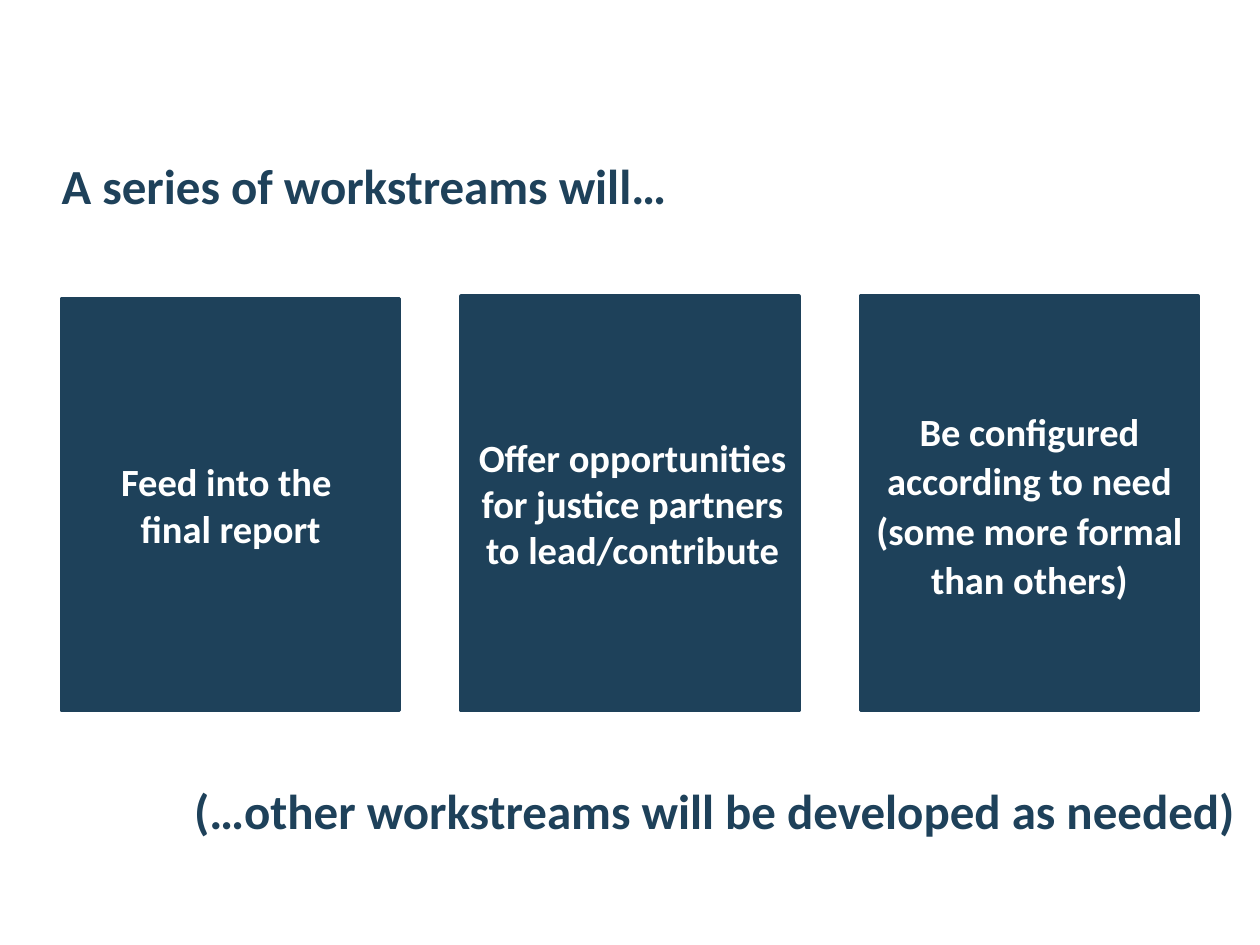
from pptx import Presentation
from pptx.dml.color import RGBColor
from pptx.enum.shapes import MSO_SHAPE
from pptx.enum.text import MSO_ANCHOR, PP_ALIGN
from pptx.util import Inches, Pt

NAVY = RGBColor(0x1E, 0x41, 0x5A)
WHITE = RGBColor(0xFF, 0xFF, 0xFF)
WIDTH, HEIGHT = 10, 7.5
COLS, ROWS = 100, 75


class Deck:
    """Holds the style and the current slide, laid out on a 100 by 75 grid."""

    font = "Calibri"

    def __init__(self):
        self.file = Presentation()
        self.file.slide_width = Inches(WIDTH)
        self.file.slide_height = Inches(HEIGHT)
        self.slide = self.file.slides.add_slide(self.file.slide_layouts[6])

    def place(self, col, row, wide, high):
        across, down = WIDTH / COLS, HEIGHT / ROWS
        return [Inches(n) for n in (col * across, row * down, wide * across, high * down)]

    def letter(self, shape, text, size, color, align, sides, after=0, lines=None):
        frame = shape.text_frame
        frame.word_wrap = True
        frame.vertical_anchor = MSO_ANCHOR.MIDDLE
        frame.margin_left, frame.margin_right = [Inches(n) for n in sides]
        para = frame.paragraphs[0]
        para.text = text
        para.alignment = align
        para.space_after = Pt(after)
        para.line_spacing = lines
        para.font.name = self.font
        para.font.size = Pt(size)
        para.font.bold = True
        para.font.color.rgb = color

    def card(self, text, spot, sides=(0.1, 0.1), after=0, lines=None):
        shape = self.slide.shapes.add_shape(MSO_SHAPE.RECTANGLE, *self.place(*spot))
        shape.shadow.inherit = False
        shape.fill.solid()
        shape.fill.fore_color.rgb = NAVY
        shape.line.color.rgb = NAVY
        shape.line.width = Pt(2)
        self.letter(shape, text, 22, WHITE, PP_ALIGN.CENTER, sides, after, lines)

    def label(self, text, spot):
        box = self.slide.shapes.add_textbox(*self.place(*spot))
        self.letter(box, text, 28, NAVY, PP_ALIGN.LEFT, (0, 0))


def main():
    deck = Deck()
    left, step, wide, base = 4.9, 31.7, 26.8, 56.4
    cards = [
        ("Feed into the \nfinal report", 23.7, {"after": 8}),
        ("Offer opportunities for justice partners to lead/contribute", 23.5,
         {"after": 8, "sides": (0.08, 0.04)}),
        ("Be configured according to need (some more formal than others)", 23.5,
         {"lines": 1.07}),
    ]
    for i, (text, top, style) in enumerate(cards):
        deck.card(text, (left + i * step, top, wide, base - top), **style)
    deck.label("A series of workstreams will…", (left, 2.1, 83.7, 25.2))
    deck.label("(…other workstreams will be developed as needed)", (15.4, 51.7, 112.8, 25.2))
    deck.file.save("out.pptx")


if __name__ == "__main__":
    main()
